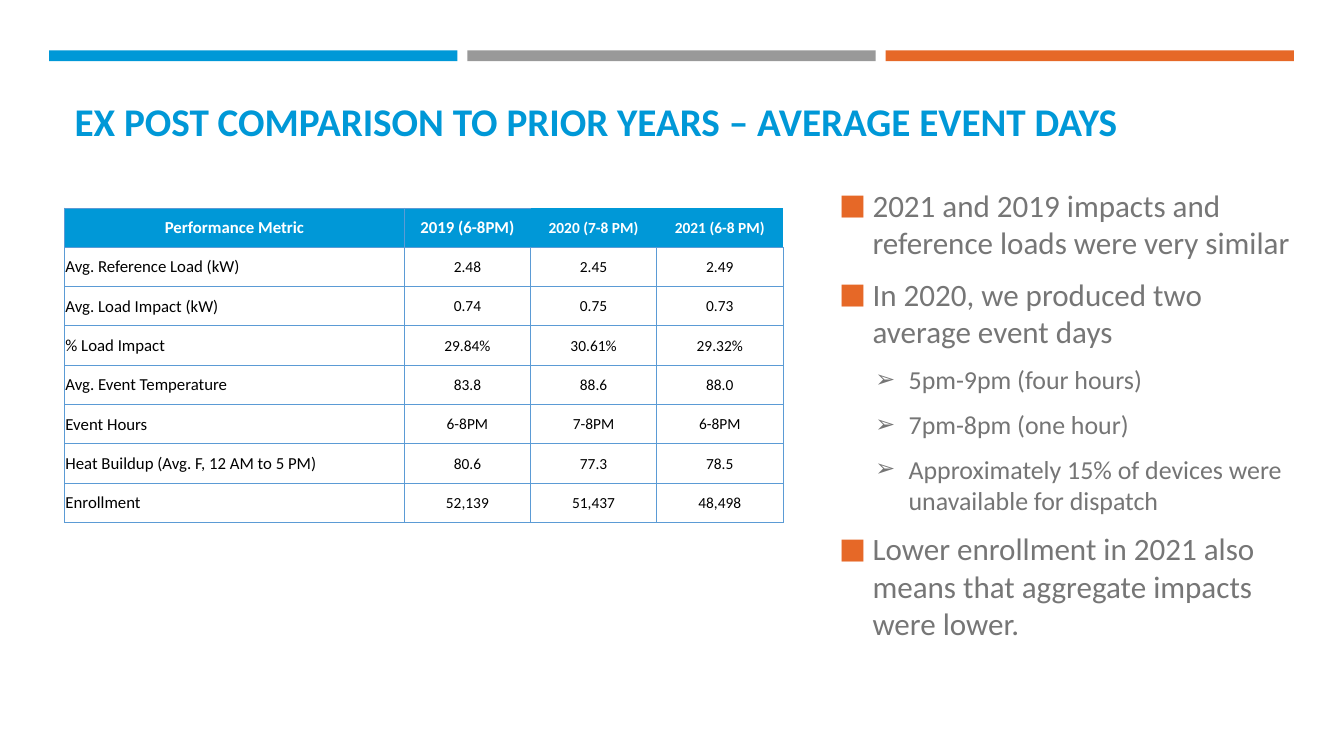
import pptx
import pptx.dml.color
import pptx.enum.shapes
import pptx.enum.text
import pptx.oxml
import pptx.oxml.ns
import pptx.util
from pptx.util import Cm

BLUE, GRAY, ORANGE = "0098D7", "999999", "E66827"
BORDER, WHITE, BLACK = "5B9BD5", "FFFFFF", "000000"
BAR_PITCH = 10.54
METRICS = [
    ["Performance Metric", "2019 (6-8PM)", "2020 (7-8 PM)", "2021 (6-8 PM)"],
    ["Avg. Reference Load (kW)", "2.48", "2.45", "2.49"],
    ["Avg. Load Impact (kW)", "0.74", "0.75", "0.73"],
    ["% Load Impact", "29.84%", "30.61%", "29.32%"],
    ["Avg. Event Temperature", "83.8", "88.6", "88.0"],
    ["Event Hours", "6-8PM", "7-8PM", "6-8PM"],
    ["Heat Buildup (Avg. F, 12 AM to 5 PM)", "80.6", "77.3", "78.5"],
    ["Enrollment", "52,139", "51,437", "48,498"],
]
FINDINGS = [
    (0, "2021 and 2019 impacts and reference loads were very similar"),
    (0, "In 2020, we produced two average event days"),
    (1, "5pm-9pm (four hours)"),
    (1, "7pm-8pm (one hour)"),
    (1, "Approximately 15% of devices were unavailable for dispatch"),
    (0, "Lower enrollment in 2021 also means that aggregate impacts were lower."),
]
LEVELS = [
    {"size": 22.2, "color": "767676", "bullet": "■", "bullet_color": ORANGE, "margin": 0.84},
    {"size": 18.5, "color": "757575", "bullet": "➢", "bullet_color": "757575", "margin": 1.75},
]


def rgb(color):
    return pptx.dml.color.RGBColor.from_string(color)


class SlideBuilder:
    """Draws styled elements on the current slide."""

    font_name = "Calibri"

    def __init__(self, slide):
        self.slide = slide

    def style(self, paragraph, size, color, bold=False):
        for run in paragraph.runs:
            run.font.name = self.font_name
            run.font.size = pptx.util.Pt(size)
            run.font.bold = bold
            run.font.color.rgb = rgb(color)

    def bar(self, left, top, width, height, color):
        shape = self.slide.shapes.add_shape(
            pptx.enum.shapes.MSO_SHAPE.RECTANGLE, Cm(left), Cm(top), Cm(width), Cm(height))
        shape.shadow.inherit = False
        shape.fill.solid()
        shape.fill.fore_color.rgb = rgb(color)
        shape.line.fill.background()

    def text_box(self, left, top, width, height):
        text_frame = self.slide.shapes.add_textbox(
            Cm(left), Cm(top), Cm(width), Cm(height)).text_frame
        text_frame.word_wrap = True
        return text_frame

    def title(self, left, top, width, height, text):
        text_frame = self.text_box(left, top, width, height)
        text_frame.vertical_anchor = pptx.enum.text.MSO_ANCHOR.BOTTOM
        text_frame.text = text
        self.style(text_frame.paragraphs[0], 28, BLUE, True)

    def bullets(self, left, top, width, height, items):
        text_frame = self.text_box(left, top, width, height)
        text_frame.text = "\n".join(text for _, text in items)
        for index, (paragraph, (level, _)) in enumerate(zip(text_frame.paragraphs, items)):
            look = LEVELS[level]
            paragraph.level = level
            paragraph.space_before = pptx.util.Pt(round(look["size"] * 0.2, 1) if index else 0)
            paragraph.space_after = pptx.util.Pt(6)
            self.bullet(paragraph, look)
            self.style(paragraph, look["size"], look["color"])

    def bullet(self, paragraph, look):
        properties = paragraph._p.get_or_add_pPr()
        properties.set("marL", str(Cm(look["margin"])))
        properties.set("indent", str(Cm(-0.84)))
        namespace = pptx.oxml.ns.nsdecls("a")
        for xml in (
            f'<a:buClr {namespace}><a:srgbClr val="{look["bullet_color"]}"/></a:buClr>',
            f'<a:buSzPct {namespace} val="92000"/>',
            f'<a:buFont {namespace} typeface="{self.font_name}"/>',
            f'<a:buChar {namespace} char="{look["bullet"]}"/>',
        ):
            properties.append(pptx.oxml.parse_xml(xml))

    def table(self, left, top, widths, row_height, rows):
        table = self.slide.shapes.add_table(
            len(rows), len(widths), Cm(left), Cm(top),
            Cm(sum(widths)), Cm(row_height * len(rows))).table
        table.first_row = table.horz_banding = False
        for column, width in zip(table.columns, widths):
            column.width = Cm(width)
        for row_index, values in enumerate(rows):
            table.rows[row_index].height = Cm(row_height)
            for column_index, value in enumerate(values):
                self.cell(table.cell(row_index, column_index), value, row_index, column_index)

    def cell(self, cell, value, row_index, column_index):
        header = row_index == 0
        drawn_sides = ("LRTB", "LTB", "B", "B")[column_index] if header else "LRTB"
        self.borders(cell, drawn_sides)
        cell.margin_left = cell.margin_right = cell.margin_top = Cm(0.02)
        cell.margin_bottom = 0
        cell.vertical_anchor = pptx.enum.text.MSO_ANCHOR.MIDDLE
        if header:
            cell.fill.solid()
            cell.fill.fore_color.rgb = rgb(BLUE)
        else:
            cell.fill.background()
        cell.text_frame.text = value
        paragraph = cell.text_frame.paragraphs[0]
        if header or column_index:
            paragraph.alignment = pptx.enum.text.PP_ALIGN.CENTER
        large = column_index == 0 or (header and column_index == 1)
        self.style(paragraph, 12 if large else 11, WHITE if header else BLACK, header)

    def borders(self, cell, drawn_sides):
        properties = cell._tc.get_or_add_tcPr()
        for side in "LRTB":
            fill = "<a:noFill/>"
            if side in drawn_sides:
                fill = f'<a:solidFill><a:srgbClr val="{BORDER}"/></a:solidFill>'
            properties.append(pptx.oxml.parse_xml(
                f'<a:ln{side} {pptx.oxml.ns.nsdecls("a")} w="6350">{fill}</a:ln{side}>'))


def main():
    presentation = pptx.Presentation()
    presentation.slide_width, presentation.slide_height = Cm(33.87), Cm(19.05)
    builder = SlideBuilder(presentation.slides.add_slide(presentation.slide_layouts[6]))
    for index, color in enumerate((BLUE, GRAY, ORANGE)):
        builder.bar(1.24 + index * BAR_PITCH, 1.27, 10.29, 0.27, color)
    builder.bullets(20.9, 4.57, 12.22, 12.45, FINDINGS)
    builder.title(1.63, 1.96, 30.63, 1.8, METRICS_TITLE)
    builder.table(1.63, 5.24, [8.56, 3.18, 3.18, 3.18], 0.99, METRICS)
    presentation.save("out.pptx")


METRICS_TITLE = "EX POST COMPARISON TO PRIOR YEARS – AVERAGE EVENT DAYS"

if __name__ == "__main__":
    main()
